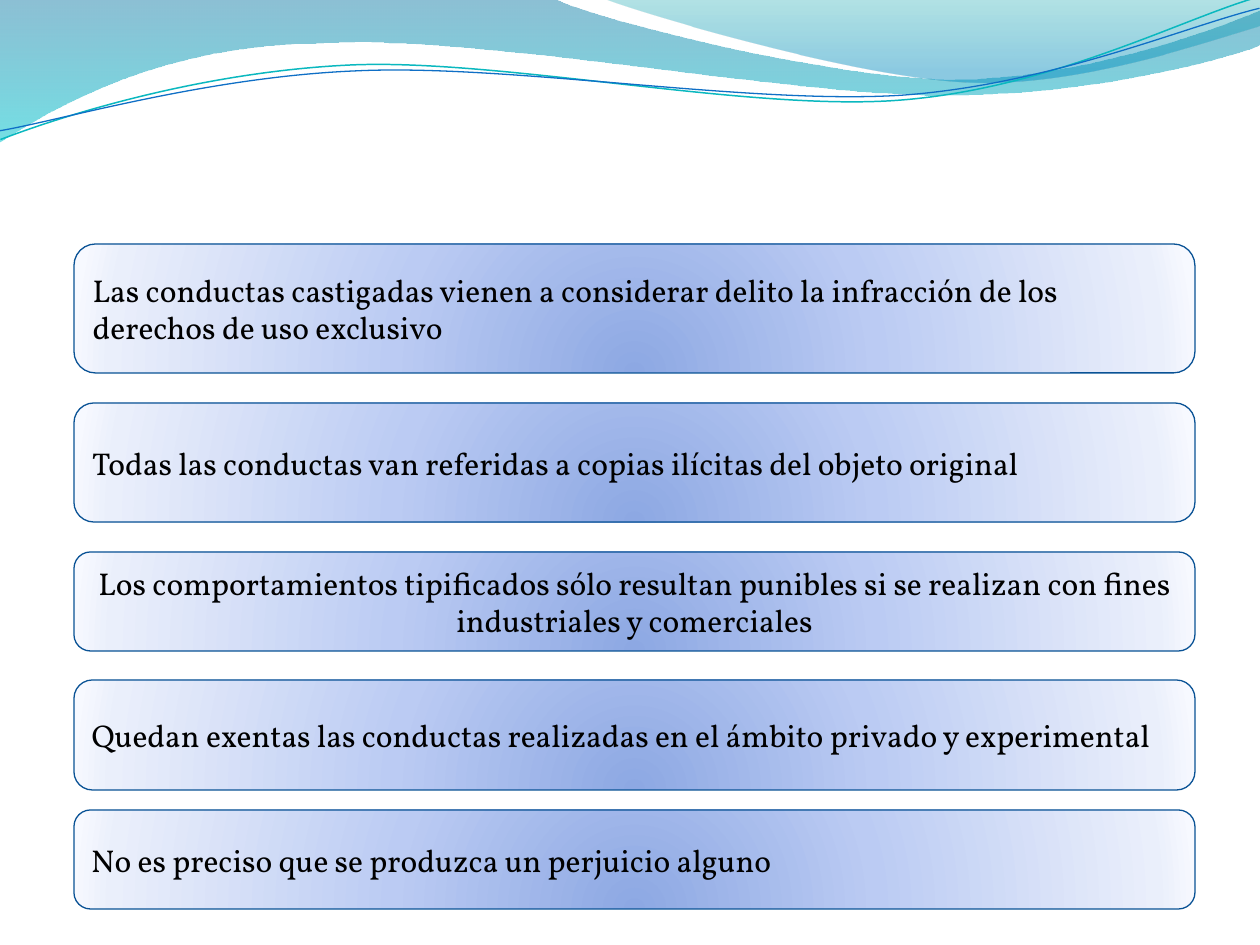
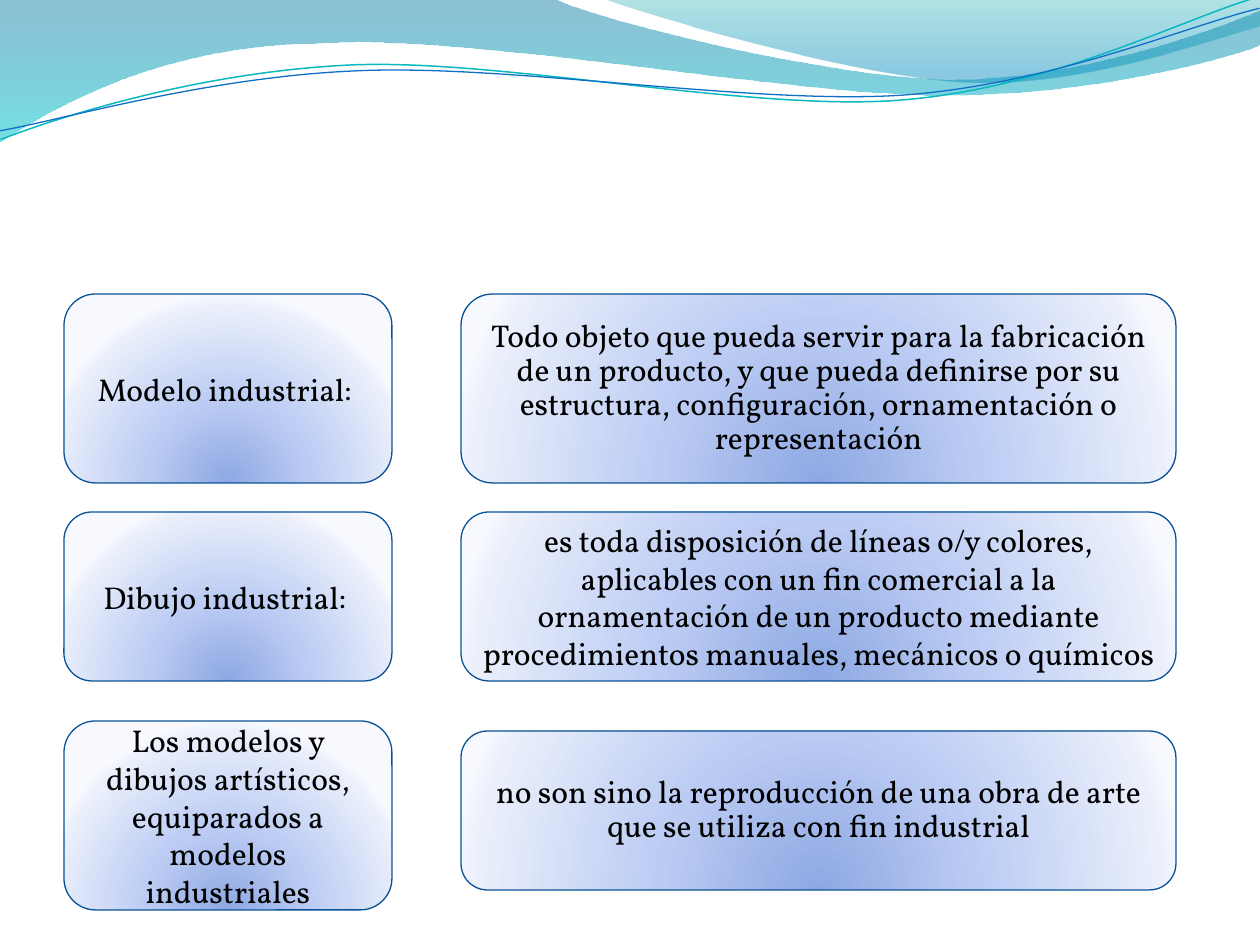
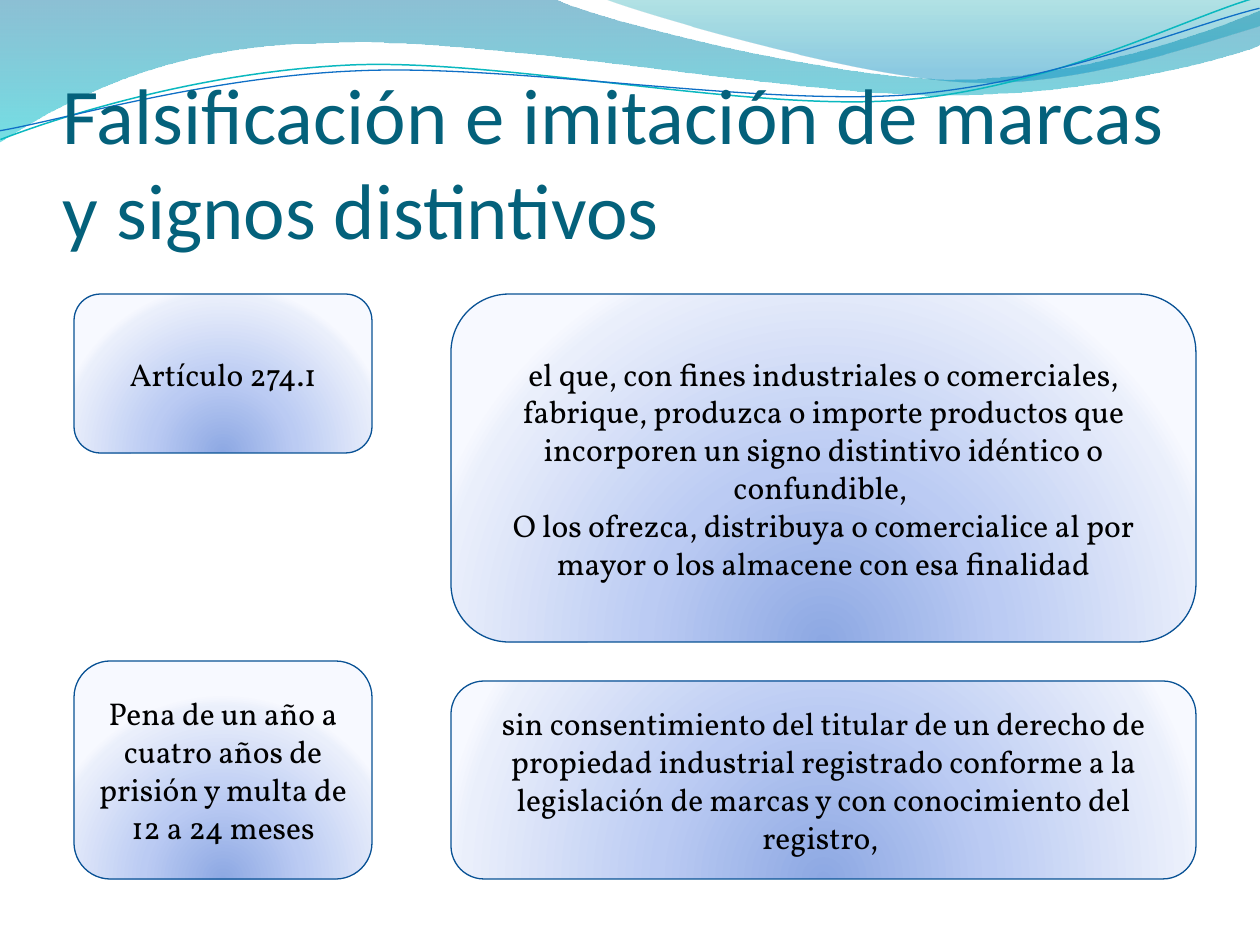
import pptx
import pptx.dml.color
import pptx.enum.shapes
import pptx.enum.text
import pptx.oxml
import pptx.oxml.ns
import pptx.util

PX = pptx.util.Inches(1) / 126
CENTER = pptx.enum.text.PP_ALIGN.CENTER
LEFT = pptx.enum.text.PP_ALIGN.LEFT

CARD_STOPS = [(0, "8DA8E3", 100), (43, "BBCBF3", 100), (93, "EAEFFB", 100), (100, "F7F9FF", 100)]
CARD_SHADE = '<a:path path="circle"><a:fillToRect l="50000" t="130000" r="50000" b="-30000"/></a:path>'
RIBBON_SHADE = '<a:lin ang="5400000" scaled="1"/>'
CARD_LINE = ("095295", 0.75)
CARD_FONT = {"name": "Vollkorn", "size": pptx.util.Pt(18)}
TITLE_FONT = {"name": "Calibri", "size": pptx.util.Pt(45)}
TITLE_AREA = (63, 97, 1144, 158)
TITLE_FRAME = {
    "word_wrap": True,
    "vertical_anchor": pptx.enum.text.MSO_ANCHOR.BOTTOM,
    "margin_left": 0,
    "margin_right": 0,
    "margin_bottom": 0,
}
CARD_FRAME = {"word_wrap": True, "vertical_anchor": pptx.enum.text.MSO_ANCHOR.MIDDLE}
WAVE_TURN = 357.3

RIBBONS = [
    {
        "start": (0, -1),
        "legs": [
            [(554, -1)],
            [(600, 21), (837, 79), (955, 79)],
            [(1075, 79), (1207, 33), (1260, 11)],
            [(1261, 45)],
            [(1239, 55), (1096, 96), (940, 95)],
            [(784, 95), (481, 35), (324, 43)],
            [(163, 44), (58, 105), (-1, 142)],
        ],
        "stops": [(0, "0074A1", 45), (100, "00C6CF", 55)],
    },
    {
        "start": (604, -1),
        "legs": [
            [(641, 14), (859, 78), (969, 82)],
            [(1079, 87), (1211, 40), (1260, 26)],
            [(1260, 0)],
        ],
        "stops": [(0, "00A1A9", 30), (80, "008BBF", 45)],
    },
    {
        "start": (-2, 110),
        "legs": [
            [(58, 90), (199, 52), (350, 52)],
            [(499, 52), (745, 117), (896, 113)],
            [(1049, 109), (1184, 45), (1260, 27)],
        ],
        "line": ("0AB8BF", 0.85),
    },
    {
        "start": (-2, 101),
        "legs": [
            [(57, 94), (207, 57), (357, 58)],
            [(509, 58), (750, 111), (902, 108)],
            [(1052, 104), (1189, 52), (1262, 38)],
        ],
        "line": ("0F6FC6", 0.75),
    },
]

SLIDES = [
    {
        "columns": [(74, 1121)],
        "cards": [
            (0, 244, 129, LEFT, 1, ["Las conductas castigadas vienen a considerar delito la infracción de los derechos de uso exclusivo"]),
            (0, 403, 119, LEFT, 1, ["Todas las conductas van referidas a copias ilícitas del objeto original"]),
            (0, 552, 99, CENTER, 1, ["Los comportamientos tipificados sólo resultan punibles si se realizan con fines industriales y comerciales"]),
            (0, 680, 110, LEFT, 1, ["Quedan exentas las conductas realizadas en el ámbito privado y experimental"]),
            (0, 810, 99, LEFT, 1, ["No es preciso que se produzca un perjuicio alguno"]),
        ],
    },
    {
        "columns": [(64, 328), (461, 715)],
        "cards": [
            (1, 294, 189, CENTER, 0.9, ["Todo objeto que pueda servir para la fabricación de un producto, y que pueda definirse por su estructura, configuración, ornamentación o representación"]),
            (0, 294, 189, CENTER, 1, ["Modelo industrial: "]),
            (0, 512, 169, CENTER, 1, ["Dibujo industrial: "]),
            (1, 512, 169, CENTER, 1, ["es toda disposición de líneas o/y colores, aplicables con un fin comercial a la ornamentación de un producto mediante procedimientos manuales, mecánicos o químicos"]),
            (0, 721, 189, CENTER, 1, ["Los modelos y dibujos artísticos, equiparados a modelos industriales"]),
            (1, 731, 159, CENTER, 0.9, ["no son sino la reproducción de una obra de arte que se utiliza con fin industrial"]),
        ],
    },
    {
        "title": "Falsificación e imitación de marcas y signos distintivos",
        "columns": [(74, 298), (451, 745)],
        "cards": [
            (0, 294, 159, CENTER, 1, ["Artículo 274.1"]),
            (1, 294, 348, CENTER, 1, [
                "el que, con fines industriales o comerciales, fabrique, produzca o importe productos que incorporen un signo distintivo idéntico o confundible, ",
                "O los ofrezca, distribuya o comercialice al por mayor o los almacene con esa finalidad",
            ]),
            (1, 681, 198, CENTER, 1, ["sin consentimiento del titular de un derecho de propiedad industrial registrado conforme a la legislación de marcas y con conocimiento del registro, "]),
            (0, 661, 218, CENTER, 1, ["Pena de un año a cuatro años de prisión y multa de 12 a 24 meses"]),
        ],
    },
]


def color(value):
    return pptx.dml.color.RGBColor.from_string(value)


def emu(*lengths):
    return [round(length * PX) for length in lengths]


def apply(target, values):
    for name, value in values.items():
        setattr(target, name, value)


def fill_gradient(shape, stops, shade):
    marks = "".join(
        f'<a:gs pos="{place * 1000}"><a:srgbClr val="{value}"><a:alpha val="{alpha * 1000}"/></a:srgbClr></a:gs>'
        for place, value, alpha in stops
    )
    gradient = pptx.oxml.parse_xml(
        f'<a:gradFill {pptx.oxml.ns.nsdecls("a")} rotWithShape="1"><a:gsLst>{marks}</a:gsLst>{shade}</a:gradFill>'
    )
    shape.fill.background()
    properties = shape.element.spPr
    properties.replace(properties.find(pptx.oxml.ns.qn("a:noFill")), gradient)


def draw_line(shape, value, width):
    shape.line.color.rgb = color(value)
    shape.line.width = pptx.util.Pt(width)


def bend_legs(shape, legs):
    segments = iter(list(shape.element.spPr.iter(pptx.oxml.ns.qn("a:lnTo"))))
    for leg in legs:
        parts = [next(segments) for point in leg]
        if len(parts) == 1:
            continue
        curve = pptx.oxml.parse_xml(f'<a:cubicBezTo {pptx.oxml.ns.nsdecls("a")}/>')
        parts[0].addprevious(curve)
        for part in parts:
            curve.append(part[0])
            part.getparent().remove(part)


def add_ribbon(page, ribbon):
    points = [emu(*point) for leg in ribbon["legs"] for point in leg]
    builder = page.shapes.build_freeform(*emu(*ribbon["start"]), scale=1.0)
    builder.add_line_segments(points, close="stops" in ribbon)
    shape = builder.convert_to_shape()
    bend_legs(shape, ribbon["legs"])
    shape.shadow.inherit = False
    if "stops" in ribbon:
        fill_gradient(shape, ribbon["stops"], RIBBON_SHADE)
        shape.line.fill.background()
    else:
        shape.fill.background()
        draw_line(shape, *ribbon["line"])
        shape.rotation = WAVE_TURN


def write(box, texts, frame_values, font_values, text_color, alignment, spacing):
    frame = box.text_frame
    apply(frame, frame_values)
    for index, text in enumerate(texts):
        para = frame.add_paragraph() if index else frame.paragraphs[0]
        apply(para, {"alignment": alignment, "line_spacing": spacing})
        span = para.add_run()
        span.text = text
        apply(span.font, font_values)
        span.font.color.rgb = color(text_color)


def add_title(page, text):
    box = page.shapes.add_textbox(*emu(*TITLE_AREA))
    write(box, [text], TITLE_FRAME, TITLE_FONT, "04617B", LEFT, 1)


def add_card(page, columns, card):
    column, top, height, alignment, spacing, texts = card
    left, width = columns[column]
    kind = pptx.enum.shapes.MSO_SHAPE.ROUNDED_RECTANGLE
    box = page.shapes.add_shape(kind, *emu(left, top, width, height))
    box.shadow.inherit = False
    fill_gradient(box, CARD_STOPS, CARD_SHADE)
    draw_line(box, *CARD_LINE)
    write(box, texts, CARD_FRAME, CARD_FONT, "000000", alignment, spacing)


def main():
    deck = pptx.Presentation()
    deck.slide_width, deck.slide_height = emu(1260, 945)
    for content in SLIDES:
        page = deck.slides.add_slide(deck.slide_layouts[6])
        for ribbon in RIBBONS:
            add_ribbon(page, ribbon)
        if "title" in content:
            add_title(page, content["title"])
        for card in content["cards"]:
            add_card(page, content["columns"], card)
    deck.save("out.pptx")


if __name__ == "__main__":
    main()
